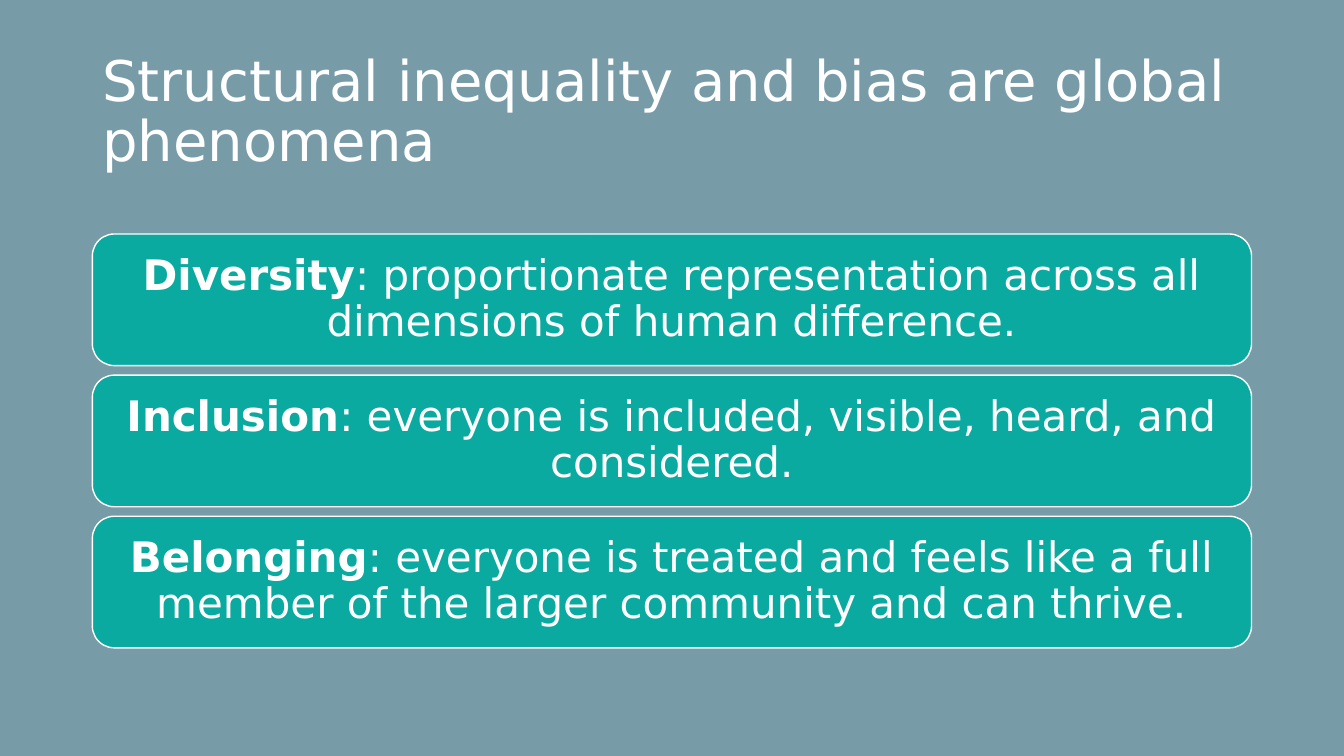
import pptx
import pptx.util
import pptx.dml.color
import pptx.enum.shapes
import pptx.enum.text

Pt = pptx.util.Pt
ALIGN = pptx.enum.text.PP_ALIGN

HEADING = "Structural inequality and bias are global phenomena"
DEFINITIONS = [
    ("Diversity", ": proportionate representation across all dimensions of human difference."),
    ("Inclusion", ": everyone is included, visible, heard, and considered."),
    ("Belonging", ": everyone is treated and feels like a full member of the larger community and can thrive."),
]

FONT = "DejaVu Sans"
WHITE, TEAL, SLATE = "FFFFFF", "0AAAA0", "789BA8"
LEFT, WIDTH = 66, 828
HEADING_TOP, HEADING_HEIGHT = 28.75, 104.4
CARD_TOP, CARD_HEIGHT, CARD_GAP = 167.2, 94, 6.8
CARD_INSET = 8.64


def paint(color_format, value):
    color_format.rgb = pptx.dml.color.RGBColor.from_string(value)


def fill_solid(fill, value):
    fill.solid()
    paint(fill.fore_color, value)


def write(frame, text, size=30, bold=False, align=ALIGN.CENTER, inset=CARD_INSET):
    frame.word_wrap = True
    frame.auto_size = pptx.enum.text.MSO_AUTO_SIZE.NONE
    frame.vertical_anchor = pptx.enum.text.MSO_ANCHOR.MIDDLE
    frame.margin_left = frame.margin_right = Pt(inset)
    frame.margin_top = frame.margin_bottom = Pt(inset)
    paragraph = frame.paragraphs[0]
    paragraph.alignment = align
    paragraph.line_spacing = 0.9
    run = paragraph.add_run()
    run.text = text
    run.font.name = FONT
    run.font.size = Pt(size)
    run.font.bold = bold
    paint(run.font.color, WHITE)


def add_card(slide, index, term, meaning):
    top = CARD_TOP + index * (CARD_HEIGHT + CARD_GAP)
    card = slide.shapes.add_shape(
        pptx.enum.shapes.MSO_SHAPE.ROUNDED_RECTANGLE,
        Pt(LEFT), Pt(top), Pt(WIDTH), Pt(CARD_HEIGHT),
    )
    card.shadow.inherit = False
    fill_solid(card.fill, TEAL)
    paint(card.line.color, WHITE)
    card.line.width = Pt(1)
    write(card.text_frame, term, bold=True)
    write(card.text_frame, meaning)


def main():
    deck = pptx.Presentation()
    deck.slide_width, deck.slide_height = Pt(960), Pt(540)
    slide = deck.slides.add_slide(deck.slide_layouts[5])
    fill_solid(slide.background.fill, SLATE)

    heading = slide.shapes.title
    heading.left, heading.top = Pt(LEFT), Pt(HEADING_TOP)
    heading.width, heading.height = Pt(WIDTH), Pt(HEADING_HEIGHT)
    write(heading.text_frame, HEADING, size=40, align=ALIGN.LEFT, inset=7.2)

    for index, (term, meaning) in enumerate(DEFINITIONS):
        add_card(slide, index, term, meaning)

    deck.save("out.pptx")


if __name__ == "__main__":
    main()
